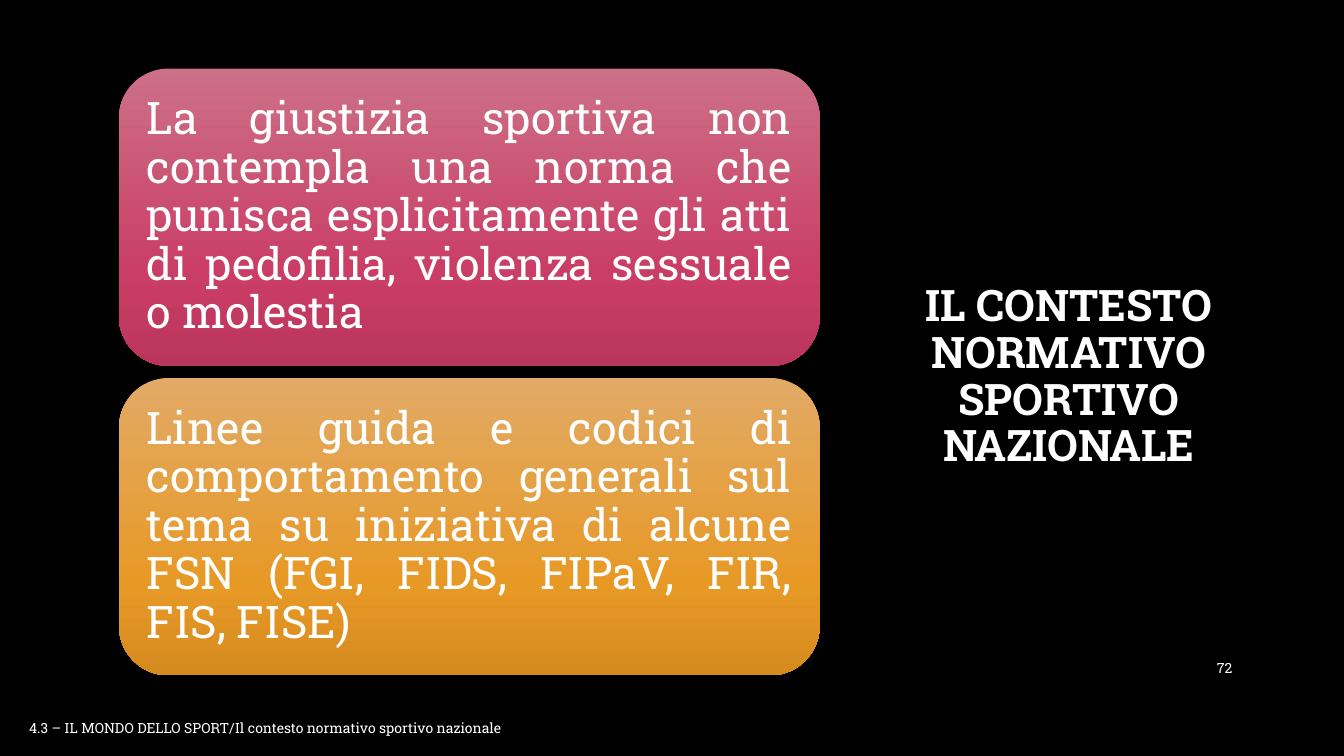
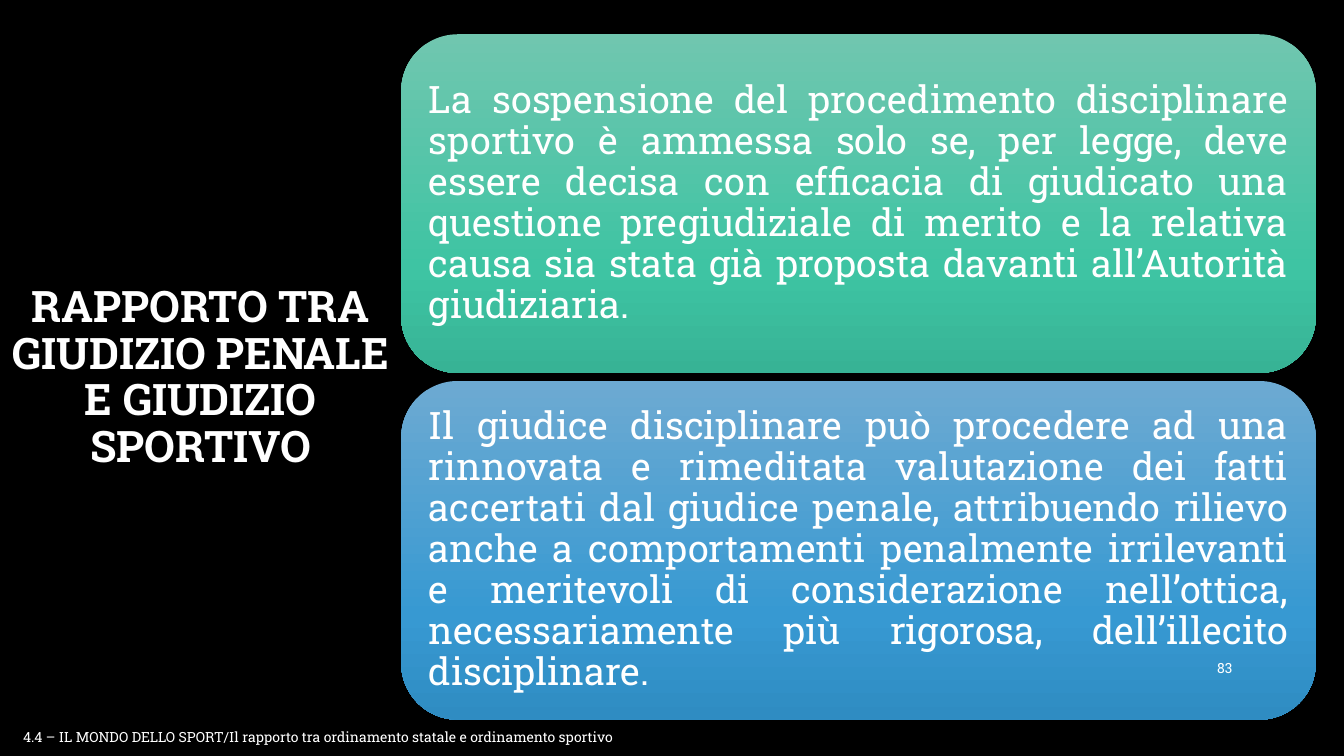
from copy import deepcopy
from dataclasses import dataclass

from pptx import Presentation
from pptx.dml.color import RGBColor
from pptx.enum.shapes import MSO_SHAPE as SHAPE
from pptx.enum.text import MSO_ANCHOR as ANCHOR, PP_ALIGN as ALIGN
from pptx.oxml.ns import qn
from pptx.util import Pt

PX = 9144  # 100 px to the inch
SLIDE_W, SLIDE_H = 1333, 750
PAGE_BOX = (1150, 643, 82, 40)
FOOTER_SIZE = (668, 27)


@dataclass(frozen=True)
class Theme:
    font: str = "Roboto Slab"
    background: str = "000000"
    text: str = "FFFFFF"
    title_size: int = 31
    small_size: int = 10
    line_spacing: float = 0.9
    stops: tuple = (0, 0.69, 1)
    red: tuple = ("CC7087", "CA3D66", "BA355B")
    orange: tuple = ("E2AA66", "E79926", "D68B1F")
    green: tuple = ("70C6AF", "3EC4A3", "37B395")
    blue: tuple = ("6DAAD2", "3799D2", "2F8CC2")


THEME = Theme()

SLIDES = [
    {
        "title": "IL CONTESTO NORMATIVO SPORTIVO NAZIONALE",
        "title_box": (861, 69, 398, 611),
        "first_card": (118, 68, 695, 295),
        "gap": 12,
        "inset": 13,
        "size": 32,
        "cards": [
            (THEME.red, "La giustizia sportiva non contempla una norma che punisca "
                        "esplicitamente gli atti di pedofilia, violenza sessuale o molestia"),
            (THEME.orange, "Linee guida e codici di comportamento generali sul tema su "
                           "iniziativa di alcune FSN (FGI, FIDS, FIPaV, FIR, FIS, FISE)"),
        ],
        "page": "72",
        "footer": "4.3 – IL MONDO DELLO SPORT/Il contesto normativo sportivo nazionale",
        "footer_at": (19, 709),
    },
    {
        "title": "RAPPORTO TRA GIUDIZIO PENALE E GIUDIZIO SPORTIVO",
        "title_box": (0, 69, 398, 613),
        "first_card": (398, 34, 907, 336),
        "gap": 8,
        "inset": 11,
        "size": 27,
        "cards": [
            (THEME.green, "La sospensione del procedimento disciplinare sportivo è ammessa "
                          "solo se, per legge, deve essere decisa con efficacia di giudicato "
                          "una questione pregiudiziale di merito e la relativa causa sia "
                          "stata già proposta davanti all’Autorità giudiziaria."),
            (THEME.blue, "Il giudice disciplinare può procedere ad una rinnovata e rimeditata "
                         "valutazione dei fatti accertati dal giudice penale, attribuendo "
                         "rilievo anche a comportamenti penalmente irrilevanti e meritevoli "
                         "di considerazione nell’ottica, necessariamente più rigorosa, "
                         "dell’illecito disciplinare."),
        ],
        "page": "83",
        "footer": "4.4 – IL MONDO DELLO SPORT/Il rapporto tra ordinamento statale "
                  "e ordinamento sportivo",
        "footer_at": (13, 718),
    },
]


def emu(box):
    return [v * PX for v in box]


def write(sp, text, size, align=ALIGN.LEFT, anchor=ANCHOR.MIDDLE, bold=False, spacing=1.0):
    tf = sp.text_frame
    tf.word_wrap = True
    tf.vertical_anchor = anchor
    p = tf.paragraphs[0]
    p.alignment = align
    p.line_spacing = spacing
    r = p.add_run()
    r.text = text
    r.font.name = THEME.font
    r.font.size = Pt(size)
    r.font.bold = bold
    r.font.color.rgb = RGBColor.from_string(THEME.text)


def fill_gradient(sp, colors):
    """Fill from top to bottom with one colour per theme stop."""
    sp.fill.gradient()
    sp.fill.gradient_angle = 270
    stop_list = sp._element.spPr.find(qn("a:gradFill")).find(qn("a:gsLst"))
    stop_list.append(deepcopy(stop_list[-1]))
    for stop, position, color in zip(sp.fill.gradient_stops, THEME.stops, colors):
        stop.position = position
        stop.color.rgb = RGBColor.from_string(color)


def add_card(s, box, colors, text, size, inset):
    sp = s.shapes.add_shape(SHAPE.ROUNDED_RECTANGLE, *emu(box))
    sp.shadow.inherit = False
    sp.line.fill.background()
    fill_gradient(sp, colors)
    tf = sp.text_frame
    tf.margin_left = tf.margin_right = tf.margin_top = tf.margin_bottom = inset * PX
    write(sp, text, size, ALIGN.JUSTIFY, spacing=THEME.line_spacing)


def add_slide(prs, data):
    s = prs.slides.add_slide(prs.slide_layouts[6])
    s.background.fill.solid()
    s.background.fill.fore_color.rgb = RGBColor.from_string(THEME.background)

    title = s.shapes.add_textbox(*emu(data["title_box"]))
    write(title, data["title"], THEME.title_size, ALIGN.CENTER, bold=True,
          spacing=THEME.line_spacing)

    left, top, width, height = data["first_card"]
    for i, (colors, text) in enumerate(data["cards"]):
        box = (left, top + i * (height + data["gap"]), width, height)
        add_card(s, box, colors, text, data["size"], data["inset"])

    page = s.shapes.add_textbox(*emu(PAGE_BOX))
    write(page, data["page"], THEME.small_size, ALIGN.RIGHT)
    footer = s.shapes.add_textbox(*emu(data["footer_at"] + FOOTER_SIZE))
    write(footer, data["footer"], THEME.small_size, anchor=ANCHOR.TOP)


def main():
    prs = Presentation()
    prs.slide_width, prs.slide_height = emu((SLIDE_W, SLIDE_H))
    for data in SLIDES:
        add_slide(prs, data)
    prs.save("out.pptx")


if __name__ == "__main__":
    main()
